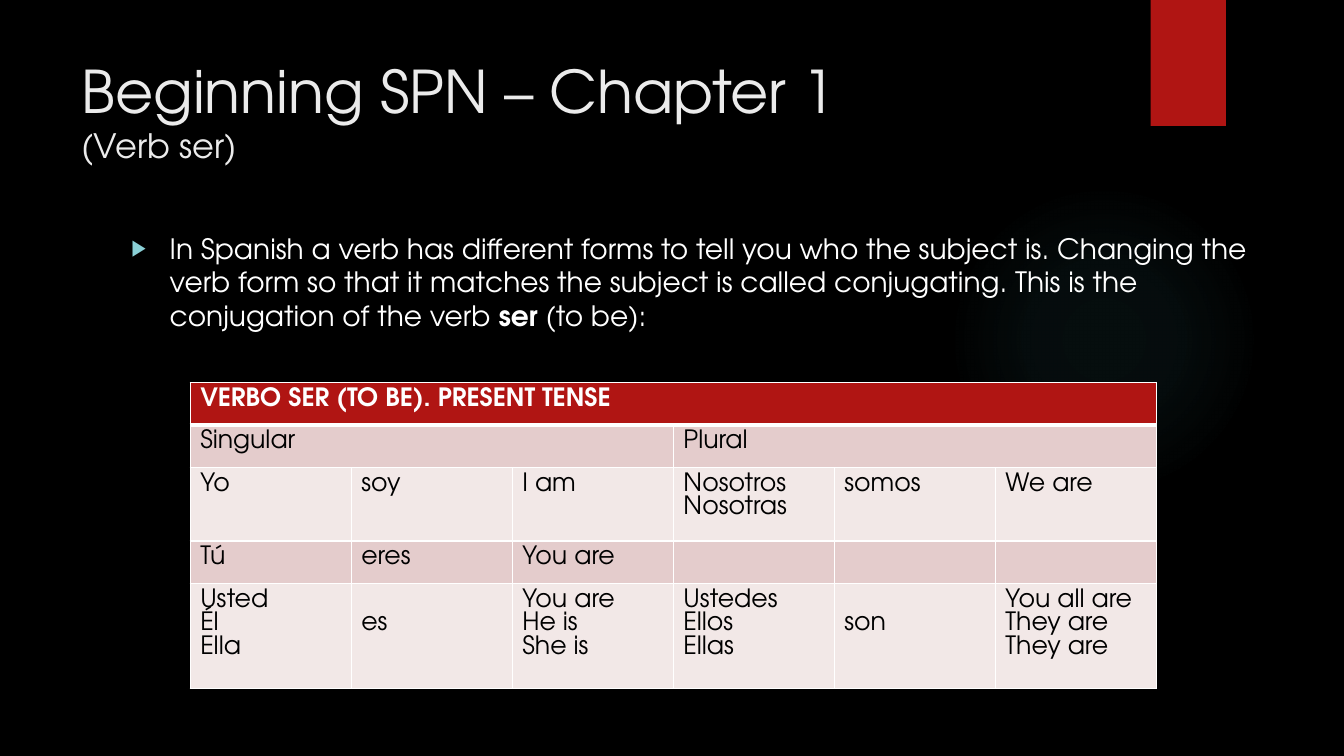
from lxml.etree import SubElement
from pptx import Presentation
from pptx.dml.color import RGBColor
from pptx.enum.shapes import MSO_SHAPE as SHAPE
from pptx.enum.text import MSO_ANCHOR as ANCHOR
from pptx.oxml import parse_xml
from pptx.oxml.ns import nsdecls, qn
from pptx.util import Inches, Pt

BLACK = RGBColor(0x00, 0x00, 0x00)
WHITE = RGBColor(0xFF, 0xFF, 0xFF)
PALE = RGBColor(0xEB, 0xEB, 0xEB)
RED = RGBColor(0xB0, 0x15, 0x13)
ROSE = RGBColor(0xE4, 0xCC, 0xCC)
BLUSH = RGBColor(0xF2, 0xE8, 0xE7)
TEAL = RGBColor(0x50, 0xB9, 0xC1)
AQUA = RGBColor(0x8A, 0xD0, 0xD6)

FONT = "TeX Gyre Adventor"
COLUMNS = 6
ROW_SHARES = [5.62, 5.62, 9.73, 5.62, 13.87]
ROW_FILLS = [RED, ROSE, BLUSH, ROSE, BLUSH]
SPANS = [(0, 0, 5), (1, 0, 2), (1, 3, 5)]
CELLS = {
    (0, 0): "VERBO SER (TO BE). PRESENT TENSE",
    (1, 0): "Singular",
    (1, 3): "Plural",
    (2, 0): "Yo",
    (2, 1): "soy",
    (2, 2): "I am",
    (2, 3): "Nosotros\nNosotras",
    (2, 4): "somos",
    (2, 5): "We are",
    (3, 0): "Tú",
    (3, 1): "eres",
    (3, 2): "You are",
    (4, 0): "Usted\nÉl\nElla",
    (4, 1): "es",
    (4, 2): "You are\nHe is\nShe is",
    (4, 3): "Ustedes\nEllos\nEllas",
    (4, 4): "son",
    (4, 5): "You all are\nThey are\nThey are",
}
SECOND_LINE = [(4, 1), (4, 4)]


def write(p, text, size=18, color=BLACK, bold=False):
    r = p.add_run()
    r.text = text
    r.font.name = FONT
    r.font.size = Pt(size)
    r.font.bold = bold
    r.font.color.rgb = color


class Deck:
    def __init__(self, background):
        self.prs = Presentation()
        self.prs.slide_width = Inches(13.33)
        self.prs.slide_height = Inches(7.5)
        self.slide = self.prs.slides.add_slide(self.prs.slide_layouts[6])
        fill = self.slide.background.fill
        fill.solid()
        fill.fore_color.rgb = background

    def x(self, percent):
        return round(self.prs.slide_width * percent / 100)

    def y(self, percent):
        return round(self.prs.slide_height * percent / 100)

    def box(self, left, top, width, height):
        return self.x(left), self.y(top), self.x(width), self.y(height)

    def shape(self, kind, area, color):
        sp = self.slide.shapes.add_shape(kind, *self.box(*area))
        sp.shadow.inherit = False
        sp.fill.solid()
        sp.fill.fore_color.rgb = color
        sp.line.fill.background()
        return sp

    def glow(self, area, color, stops):
        sp = self.shape(SHAPE.OVAL, area, color)
        marks = "".join(
            f'<a:gs pos="{pos * 1000}"><a:srgbClr val="{color}">'
            f'<a:alpha val="{alpha * 1000}"/></a:srgbClr></a:gs>'
            for pos, alpha in stops)
        grad = parse_xml(
            f'<a:gradFill {nsdecls("a")}><a:gsLst>{marks}</a:gsLst>'
            '<a:path path="circle"><a:fillToRect l="50000" t="50000" '
            'r="50000" b="50000"/></a:path></a:gradFill>')
        spPr = sp.element.spPr
        spPr.replace(spPr.find(qn("a:solidFill")), grad)

    def text(self, area):
        tf = self.slide.shapes.add_textbox(*self.box(*area)).text_frame
        tf.word_wrap = True
        tf.vertical_anchor = ANCHOR.TOP
        return tf.paragraphs[0]

    def bullet(self, p, char, color, percent, indent):
        pPr = p._p.get_or_add_pPr()
        pPr.set("marL", str(Inches(indent)))
        pPr.set("indent", str(-Inches(indent)))
        tint = SubElement(pPr, qn("a:buClr"))
        SubElement(tint, qn("a:srgbClr"), val=str(color))
        SubElement(pPr, qn("a:buSzPct"), val=str(percent * 1000))
        SubElement(pPr, qn("a:buFont"), typeface="Arial")
        SubElement(pPr, qn("a:buChar"), char=char)

    def borders(self, cell, **widths):
        tcPr = cell._tc.get_or_add_tcPr()
        for side in "LRTB":
            ln = SubElement(tcPr, qn(f"a:ln{side}"), w=str(Pt(widths.get(side, 1))))
            SubElement(SubElement(ln, qn("a:solidFill")), qn("a:srgbClr"), val=str(WHITE))

    def table(self, area, shares):
        frame = self.slide.shapes.add_table(len(shares), COLUMNS, *self.box(*area))
        table = frame.table
        table.first_row = table.horz_banding = False
        for row, share in zip(table.rows, shares):
            row.height = self.y(share)
        for column in table.columns:
            column.width = self.x(area[2] / COLUMNS)
        return table

    def cell(self, table, row, col):
        cell = table.cell(row, col)
        heavy = {0: {"B": 3}, 1: {"T": 3}}.get(row, {})
        self.borders(cell, **heavy)
        cell.fill.solid()
        cell.fill.fore_color.rgb = ROW_FILLS[row]
        if (row, col) in SECOND_LINE:
            cell.margin_top = Inches(0.28)
        if (row, col) not in CELLS:
            return
        header = row == 0
        tf = cell.text_frame
        for i, line in enumerate(CELLS[row, col].split("\n")):
            p = tf.add_paragraph() if i else tf.paragraphs[0]
            write(p, line, color=WHITE if header else BLACK, bold=header)


def main():
    deck = Deck(BLACK)
    deck.glow((70.59, 24.4, 23.11, 41.07), TEAL, [(0, 7), (36, 6), (69, 0), (100, 0)])
    deck.shape(SHAPE.RECTANGLE, (85.62, 0, 5.6, 16.67), RED)

    title = deck.text((5.33, 6.6, 77.19, 20.4))
    write(title, "Beginning SPN – Chapter 1", size=42, color=PALE)
    title.add_line_break()
    write(title, "(Verb ser)", size=24, color=PALE)

    body = deck.text((9.04, 29.95, 85.22, 18))
    deck.bullet(body, "▶", AQUA, 80, 0.38)
    write(body, "In Spanish a verb has different forms to tell you who the subject is. "
          "Changing the verb form so that it matches the subject is called conjugating. "
          "This is the conjugation of the verb ", size=20, color=WHITE)
    write(body, "ser", size=20, color=WHITE, bold=True)
    write(body, " (to be):", size=20, color=WHITE)

    table = deck.table((14.15, 50.6, 71.9, sum(ROW_SHARES)), ROW_SHARES)
    for row in range(len(ROW_SHARES)):
        for col in range(COLUMNS):
            deck.cell(table, row, col)
    for row, first, last in SPANS:
        table.cell(row, first).merge(table.cell(row, last))

    deck.prs.save("out.pptx")


if __name__ == "__main__":
    main()
